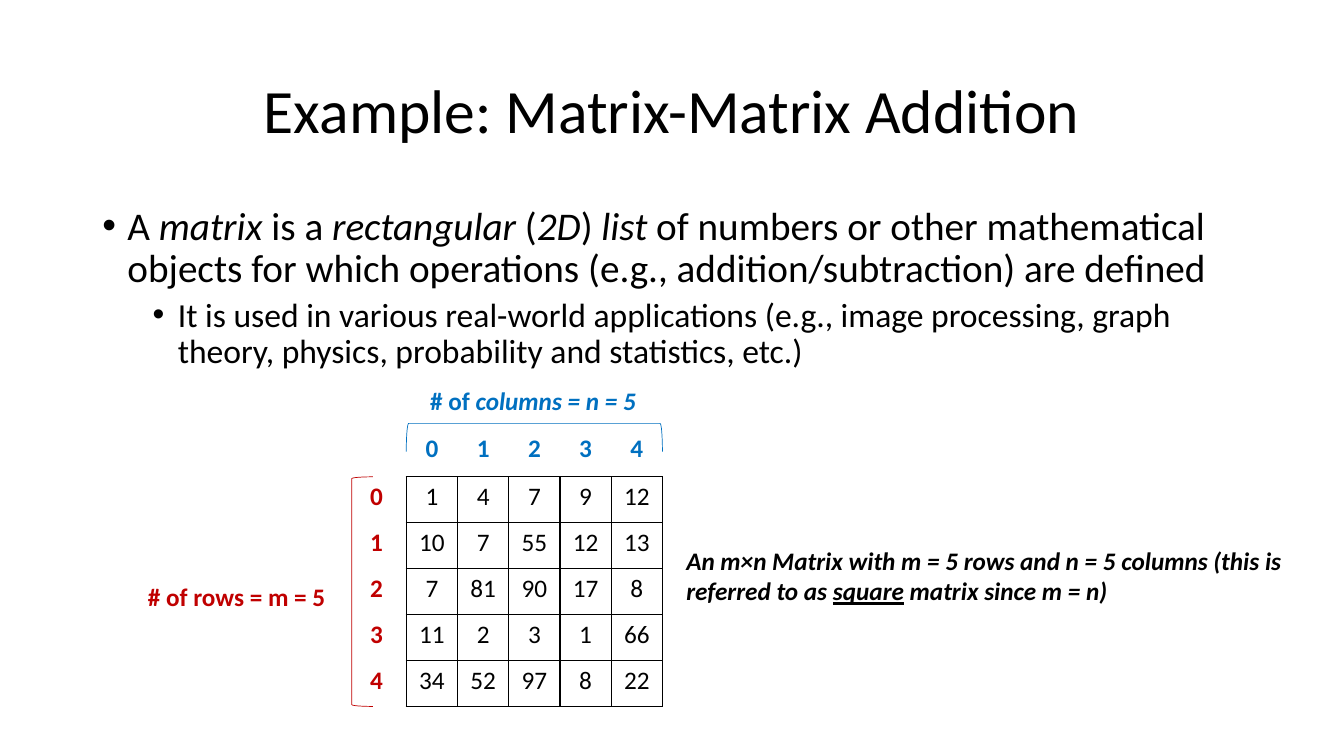
"""Build a slide that introduces matrices for matrix-matrix addition."""
from lxml.etree import SubElement
from pptx import Presentation
from pptx.dml.color import RGBColor
from pptx.enum.shapes import MSO_SHAPE
from pptx.enum.text import MSO_ANCHOR, MSO_AUTO_SIZE, PP_ALIGN
from pptx.oxml.ns import qn
from pptx.util import Pt

BLACK = RGBColor(0x00, 0x00, 0x00)
RED = RGBColor(0xC0, 0x00, 0x00)
BLUE = RGBColor(0x00, 0x70, 0xC0)
NO_TABLE_STYLE = "{2D5ABB26-0587-4C30-8999-92F81FD0307C}"

MATRIX_LEFT, MATRIX_TOP = 290.2, 340.6
COLUMN_WIDTH, ROW_HEIGHT = 36.6, 32.8
MATRIX = [
    [1, 4, 7, 9, 12],
    [10, 7, 55, 12, 13],
    [7, 81, 90, 17, 8],
    [11, 2, 3, 1, 66],
    [34, 52, 97, 8, 22],
]
ROW_COUNT, COLUMN_COUNT = len(MATRIX), len(MATRIX[0])


def write(paragraph, text, size=18, color=BLACK, bold=False, italic=False, underline=False):
    run = paragraph.add_run()
    run.text = text
    font = run.font
    font.name, font.size, font.color.rgb = "Calibri", Pt(size), color
    font.bold, font.italic, font.underline = bold, italic, underline


def add_grid(values, left, top, width, height, bordered=False, **text_format):
    rows, columns = len(values), len(values[0])
    frame = slide.shapes.add_table(
        rows, columns, Pt(left), Pt(top), Pt(width * columns), Pt(height * rows))
    next(frame.element.iter(qn("a:tableStyleId"))).text = NO_TABLE_STYLE
    grid = frame.table
    grid.first_row = grid.horz_banding = False
    for column in grid.columns:
        column.width = Pt(width)
    for row, row_values in zip(grid.rows, values):
        row.height = Pt(height)
        for cell, value in zip(row.cells, row_values):
            cell.margin_left = cell.margin_right = 0
            paragraph = cell.text_frame.paragraphs[0]
            paragraph.alignment = PP_ALIGN.CENTER
            write(paragraph, str(value), **text_format)
            properties = cell.fill._xPr
            for side in ("a:lnL", "a:lnR", "a:lnT", "a:lnB") if bordered else ():
                border = SubElement(properties, qn(side), w=str(Pt(1)))
                border_fill = SubElement(border, qn("a:solidFill"))
                SubElement(border_fill, qn("a:srgbClr"), val=str(BLACK))
            cell.fill.background()


presentation = Presentation()
presentation.slide_width, presentation.slide_height = Pt(960), Pt(540)
slide = presentation.slides.add_slide(presentation.slide_layouts[5])

title = slide.shapes.title
title.left, title.top, title.width, title.height = Pt(66), Pt(28.8), Pt(828), Pt(104.4)
title.text_frame.vertical_anchor = MSO_ANCHOR.MIDDLE
heading = title.text_frame.paragraphs[0]
heading.alignment, heading.line_spacing = PP_ALIGN.CENTER, 0.9
write(heading, "Example: Matrix-Matrix Addition", size=44)

definition = slide.shapes.add_textbox(Pt(66), Pt(144), Pt(828), Pt(342.7)).text_frame
definition.word_wrap = True
bullets = [
    (0, 28, 18, 10, [
        ("A ", False), ("matrix ", True), ("is a ", False), ("rectangular ", True),
        ("(", False), ("2D", True), (") ", False), ("list", True),
        (" of numbers or other mathematical objects for which operations "
         "(e.g., addition/subtraction) are defined", False)]),
    (1, 24, 54, 5, [
        ("It is used in various real-world applications (e.g., image processing, "
         "graph theory, physics, probability and statistics, etc.)", False)]),
]
for level, size, indent, space_before, pieces in bullets:
    point = definition.add_paragraph() if level else definition.paragraphs[0]
    point.level, point.line_spacing, point.space_before = level, 0.9, Pt(space_before)
    for text, italic in pieces:
        write(point, text, size=size, italic=italic)
    properties = point._p.get_or_add_pPr()
    properties.set("marL", str(Pt(indent)))
    properties.set("indent", str(Pt(-18)))
    SubElement(properties, qn("a:buFont"), typeface="Arial")
    SubElement(properties, qn("a:buChar"), char="•")

add_grid(MATRIX, MATRIX_LEFT, MATRIX_TOP, COLUMN_WIDTH, ROW_HEIGHT, bordered=True)
add_grid([[row] for row in range(ROW_COUNT)], 257, MATRIX_TOP, 23.8, ROW_HEIGHT,
         color=RED, bold=True)
add_grid([range(COLUMN_COUNT)], MATRIX_LEFT, 306, COLUMN_WIDTH, 29.5, color=BLUE, bold=True)

brackets = [
    (MSO_SHAPE.LEFT_BRACKET, 251.3, MATRIX_TOP, 15.1, ROW_HEIGHT * ROW_COUNT, 0, RED),
    (MSO_SHAPE.RIGHT_BRACKET, 371.6, 221, 20.2, COLUMN_WIDTH * COLUMN_COUNT, 270, BLUE),
]
for kind, left, top, width, height, rotation, color in brackets:
    bracket = slide.shapes.add_shape(kind, Pt(left), Pt(top), Pt(width), Pt(height))
    bracket.rotation = rotation
    bracket.shadow.inherit = False
    bracket.fill.background()
    bracket.line.color.rgb, bracket.line.width = color, Pt(0.5)

labels = [
    (98.6, 411.8, 142.6, 28.8, RED, [("# of rows = m = 5", {})]),
    (300.2, 271.4, 163.4, 28.8, BLUE, [("# of ", {}), ("columns = n = 5", {"italic": True})]),
    (483.1, 385.9, 445, 51.1, BLACK, [
        ("An m×n Matrix with m = 5 rows and n = 5 columns (this is", {"italic": True}),
        ("\n", {}),
        ("referred to as ", {"italic": True}),
        ("square", {"italic": True, "underline": True}),
        (" matrix since m = n)", {"italic": True})]),
]
for left, top, width, height, color, pieces in labels:
    label = slide.shapes.add_textbox(Pt(left), Pt(top), Pt(width), Pt(height)).text_frame
    label.word_wrap, label.auto_size = False, MSO_AUTO_SIZE.SHAPE_TO_FIT_TEXT
    for text, style in pieces:
        if text == "\n":
            label.paragraphs[0].add_line_break()
        else:
            write(label.paragraphs[0], text, color=color, bold=True, **style)

presentation.save("out.pptx")
